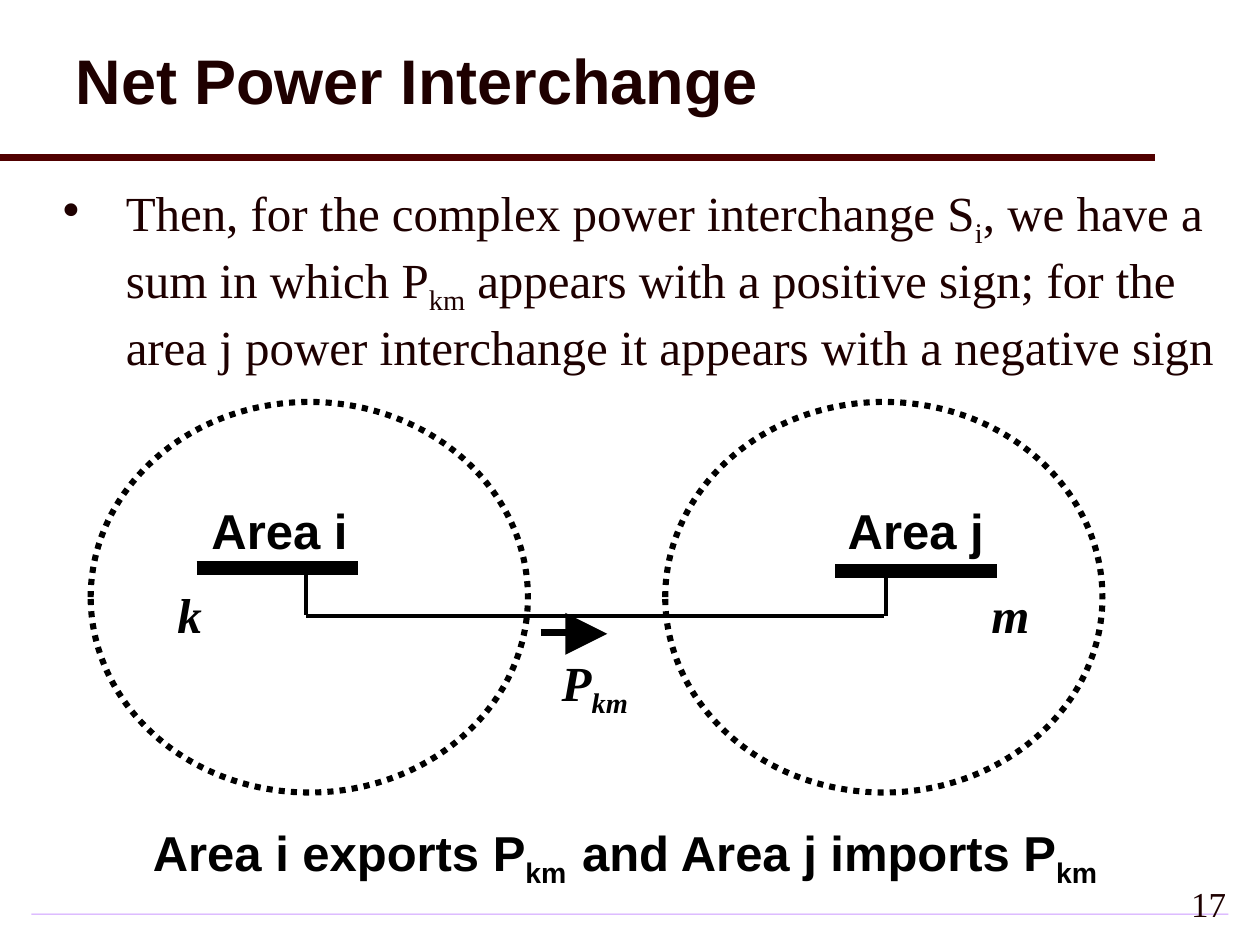
"""Build the Net Power Interchange slide."""
from pptx import Presentation
from pptx.dml.color import RGBColor
from pptx.enum import dml, shapes, text
from pptx.oxml.ns import qn
from pptx.util import Inches, Pt
from lxml import etree

COLORS = {"ink": "1E0000", "rule": "500000", "footer": "CC99FF", "black": "000000"}
SANS, SERIF = "Arial", "Times New Roman"
SUB = "-25000"

TITLE = [("Net Power Interchange", False)]
BODY = [
    ("Then, for the complex power interchange S", False),
    ("i", True),
    (", we have a sum in which P", False),
    ("km", True),
    (" appears with a positive sign; for the area j power interchange "
     "it appears with a negative sign", False),
]
SUMMARY = [
    ("Area i exports P", False),
    ("km  ", True),
    ("and Area j imports P", False),
    ("km", True),
]
AREA_LEFTS = [0.72, 5.28]
AREA_LABELS = [("Area i", (1.58, 3.92, 1.58, 0.48)), ("Area j", (6.63, 3.92, 1.37, 0.38))]
BUS_LABELS = [("k", 1.31), ("m", 7.77)]
BUSES = [(1.56, 4.51, 2.84, 4.51), (6.63, 4.53, 7.91, 4.53)]
TIE_LINES = [
    (2.43, 4.51, 2.43, 4.88),
    (2.43, 4.89, 4.89, 4.89),
    (4.89, 4.89, 7.02, 4.89),
    (7.03, 4.53, 7.03, 4.89),
]
FLOW_ARROWS = [((4.29, 5.02, 4.79, 5.02), 4), ((4.65, 5.03, 4.82, 5.03), 8)]


def rgb(name):
    return RGBColor.from_string(COLORS[name])


def place(sp, box):
    sp.left, sp.top, sp.width, sp.height = (Inches(v) for v in box)


def write(sp, runs, font, size=28, color="black", bold=False, italic=False,
          align=text.PP_ALIGN.LEFT, anchor=text.MSO_ANCHOR.TOP):
    tf = sp.text_frame
    tf.word_wrap = True
    tf.auto_size = text.MSO_AUTO_SIZE.NONE
    tf.vertical_anchor = anchor
    p = tf.paragraphs[0]
    p.alignment = align
    for content, lowered in runs:
        r = p.add_run()
        r.text = content
        f = r.font
        f.name, f.size, f.bold, f.italic = font, Pt(size), bold, italic
        f.color.rgb = rgb(color)
        if lowered:
            r._r.get_or_add_rPr().set("baseline", SUB)
    return p


def add_text(slide, box, runs, font, **style):
    sp = slide.shapes.add_textbox(*(Inches(v) for v in box))
    return write(sp, runs, font, **style)


def add_line(slide, ends, width, color="black", arrow=False):
    ln = slide.shapes.add_connector(
        shapes.MSO_CONNECTOR.STRAIGHT, *(Inches(v) for v in ends))
    ln.line.width = Pt(width)
    ln.line.color.rgb = rgb(color)
    if arrow:
        etree.SubElement(ln.line._get_or_add_ln(), qn("a:tailEnd"), type="triangle")
    etree.SubElement(ln._element.spPr, qn("a:effectLst"))


def add_shape(slide, kind, box):
    sp = slide.shapes.add_shape(kind, *(Inches(v) for v in box))
    sp.shadow.inherit = False
    return sp


def add_bullet(p):
    pPr = p._p.get_or_add_pPr()
    pPr.set("marL", str(Inches(0.5)))
    pPr.set("indent", str(-Inches(0.5)))
    color = etree.SubElement(pPr, qn("a:buClr"))
    etree.SubElement(color, qn("a:srgbClr"), val=COLORS["ink"])
    etree.SubElement(pPr, qn("a:buChar"), char="•")


def add_frame(slide):
    footer = add_shape(slide, shapes.MSO_SHAPE.RECTANGLE, (0.25, 7.25, 9.5, 0.01))
    footer.fill.solid()
    footer.fill.fore_color.rgb = rgb("footer")
    footer.line.fill.background()
    add_line(slide, (0, 1.25, 9.17, 1.25), 4, "rule")
    add_text(slide, (7.75, 6.92, 2.08, 0.5), [("17", False)], SERIF, size=20,
             color="ink", align=text.PP_ALIGN.RIGHT, anchor=text.MSO_ANCHOR.MIDDLE)


def add_diagram(slide):
    for left in AREA_LEFTS:
        area = add_shape(slide, shapes.MSO_SHAPE.OVAL, (left, 3.19, 3.47, 3.1))
        area.fill.background()
        area.line.width = Pt(3.5)
        area.line.color.rgb = rgb("black")
        area.line.dash_style = dml.MSO_LINE.ROUND_DOT
    for ends in BUSES:
        add_line(slide, ends, 8)
    for ends in TIE_LINES:
        add_line(slide, ends, 2)
    for ends, width in FLOW_ARROWS:
        add_line(slide, ends, width, arrow=True)
    for label, box in AREA_LABELS:
        add_text(slide, box, [(label, False)], SANS, bold=True)
    for label, left in BUS_LABELS:
        add_text(slide, (left, 4.59, 0.54, 0.73), [(label, False)], SERIF,
                 bold=True, italic=True)
    add_text(slide, (4.36, 5.13, 0.92, 0.38), [("P", False), ("km", True)], SERIF,
             bold=True, italic=True)
    add_text(slide, (0.67, 6.48, 8.58, 0.57), SUMMARY, SANS, bold=True,
             align=text.PP_ALIGN.CENTER)


def main():
    prs = Presentation()
    prs.slide_width, prs.slide_height = Inches(10), Inches(7.5)
    slide = prs.slides.add_slide(prs.slide_layouts[5])
    add_frame(slide)
    title = slide.shapes.title
    place(title, (0.5, 0.08, 8.75, 1.17))
    p = write(title, TITLE, SANS, size=36, color="ink", bold=True,
              anchor=text.MSO_ANCHOR.MIDDLE)
    p.line_spacing = 0.9
    add_bullet(add_text(slide, (0.4, 1.4, 9.43, 1.6), BODY, SERIF, color="ink"))
    add_diagram(slide)
    prs.save("out.pptx")


if __name__ == "__main__":
    main()
